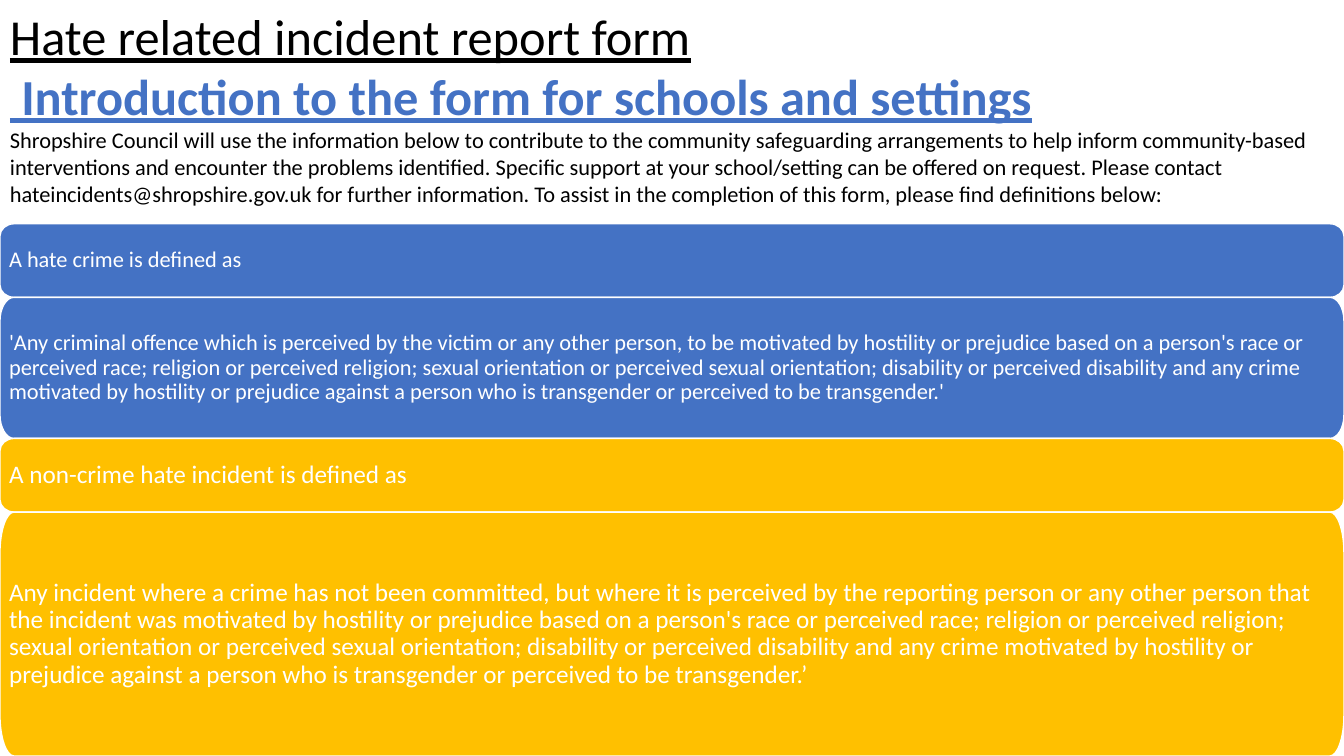
from lxml.etree import SubElement
from pptx import Presentation
from pptx.dml.color import RGBColor as RGB
from pptx.enum.text import MSO_ANCHOR as ANCHOR, MSO_AUTO_SIZE as AUTO, PP_ALIGN as ALIGN
from pptx.oxml.ns import qn
from pptx.util import Inches, Pt

COLORS = {"blue": "4472C4", "gold": "FFC000", "white": "FFFFFF", "black": "000000"}
FONT = "Calibri"
WIDTH, HEIGHT = 13.33, 7.5

INTRO = [
    ("Hate related incident report form", 36, "black", False, True),
    (" Introduction to the form for schools and settings", 36, "blue", True, True),
    ("Shropshire Council will use the information below to contribute to the community "
     "safeguarding arrangements to help inform community-based interventions and encounter "
     "the problems identified. Specific support at your school/setting can be offered on "
     "request. Please contact hateincidents@shropshire.gov.uk for further information. To "
     "assist in the completion of this form, please find definitions below:",
     16, "black", False, False),
]
DEFINITIONS = [
    ("A hate crime is defined as", 0.73, 16, "blue"),
    ("'Any criminal offence which is perceived by the victim or any other person, to be "
     "motivated by hostility or prejudice based on a person's race or perceived race; "
     "religion or perceived religion; sexual orientation or perceived sexual orientation; "
     "disability or perceived disability and any crime motivated by hostility or prejudice "
     "against a person who is transgender or perceived to be transgender.'",
     1.4, 16, "blue"),
    ("A non-crime hate incident is defined as", 0.73, 18, "gold"),
    ("Any incident where a crime has not been committed, but where it is perceived by the "
     "reporting person or any other person that the incident was motivated by hostility or "
     "prejudice based on a person's race or perceived race; religion or perceived religion; "
     "sexual orientation or perceived sexual orientation; disability or perceived disability "
     "and any crime motivated by hostility or prejudice against a person who is transgender "
     "or perceived to be transgender.’", 2.42, 18, "gold"),
]
PANELS_TOP = 2.22
CORNER_WIDTH = 0.14
CORNER_RATIO = 1 / 6
CURVE = 0.55
INSET = 0.09


def color(name):
    return RGB.from_string(COLORS[name])


def style(p, size, name, bold=False, underline=False):
    for r in p.runs:
        r.font.name, r.font.size = FONT, Pt(size)
        r.font.bold, r.font.underline = bold, underline
        r.font.color.rgb = color(name)


def panel_points(top, height):
    rx, ry = CORNER_WIDTH, height * CORNER_RATIO
    right, bottom = WIDTH, top + height
    points = [(0, top + ry), (rx, top), (right - rx, top), (right, top + ry),
              (right, bottom - ry), (right - rx, bottom), (rx, bottom), (0, bottom - ry)]
    return [(Inches(x), Inches(y)) for x, y in points]


def round_corners(sp):
    path = sp.element.find(".//" + qn("a:path"))
    steps = list(path)[:8]
    spots = [(int(pt.get("x")), int(pt.get("y"))) for pt in path.iter(qn("a:pt"))]
    for i in range(0, 7, 2):
        (x0, y0), (x1, y1) = spots[i], spots[i + 1]
        cx, cy = (x0, y1) if i % 4 == 0 else (x1, y0)
        step = steps[i + 1]
        step.tag
        curve = SubElement(path, qn("a:cubicBezTo"))
        controls = [(x + CURVE * (cx - x), y + CURVE * (cy - y))
                    for x, y in ((x0, y0), (x1, y1))]
        for x, y in controls + [(x1, y1)]:
            SubElement(curve, qn("a:pt"), x=str(round(x)), y=str(round(y)))
        path.replace(step, curve)


def add_panel(s, top, text, height, size, fill):
    start, *rest = panel_points(top, height)
    builder = s.shapes.build_freeform(*start)
    builder.add_line_segments(rest, close=True)
    sp = builder.convert_to_shape()
    round_corners(sp)
    sp.shadow.inherit = False
    sp.fill.solid()
    sp.fill.fore_color.rgb = color(fill)
    sp.line.color.rgb = color("white")
    sp.line.width = Pt(1)
    tf = sp.text_frame
    tf.word_wrap = True
    tf.vertical_anchor = ANCHOR.MIDDLE
    tf.margin_left = tf.margin_right = tf.margin_top = tf.margin_bottom = Inches(INSET)
    tf.text = text
    p = tf.paragraphs[0]
    p.alignment = ALIGN.LEFT
    p.line_spacing = 0.9
    style(p, size, "white")


def add_intro(s):
    tf = s.shapes.add_textbox(0, 0, Inches(WIDTH), Inches(2.12)).text_frame
    tf.word_wrap = True
    tf.auto_size = AUTO.SHAPE_TO_FIT_TEXT
    tf.text = "\n".join(line[0] for line in INTRO)
    for p, (_, *look) in zip(tf.paragraphs, INTRO):
        style(p, *look)


def main():
    prs = Presentation()
    prs.slide_width, prs.slide_height = Inches(WIDTH), Inches(HEIGHT)
    s = prs.slides.add_slide(prs.slide_layouts[6])
    top = PANELS_TOP
    for text, height, size, fill in DEFINITIONS:
        add_panel(s, top, text, height, size, fill)
        top += height
    add_intro(s)
    prs.save("out.pptx")


if __name__ == "__main__":
    main()
